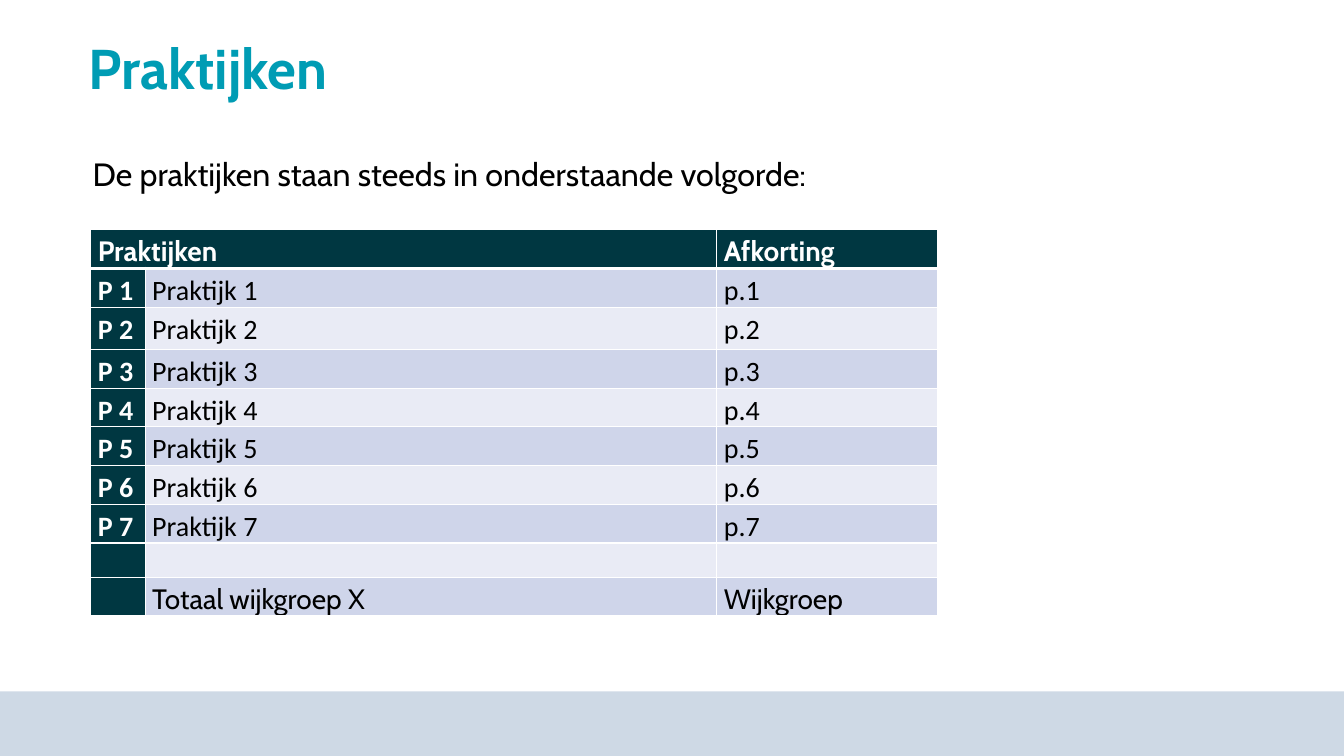
from lxml import etree
from pptx import Presentation
from pptx.dml.color import RGBColor
from pptx.enum import shapes, text
from pptx.oxml import ns
from pptx.util import Inches, Pt

COLORS = {
    "title": "009CB4",
    "dark": "003741",
    "band": "CFD5EA",
    "light": "E9EBF5",
    "footer": "CED9E5",
    "white": "FFFFFF",
    "black": "000000",
}
PRACTICES = [(f"P {n}", f"Praktijk {n}", f"p.{n}") for n in range(1, 8)]
ROWS = [
    ("Praktijken", "", "Afkorting"),
    *PRACTICES,
    ("", "", ""),
    ("", "Totaal wijkgroep X", "Wijkgroep"),
]
COLUMN_WIDTHS = [0.54, 5.67, 2.19]
ROW_HEIGHTS = [0.34, 0.37, 0.42] + [0.34] * 7


def rgb(name):
    """Return the named colour."""
    return RGBColor.from_string(COLORS[name])


def add_words(paragraph, words, size, color, bold=False, face="Cabin"):
    """Add one formatted run to a paragraph."""
    run = paragraph.add_run()
    run.text = words
    run.font.name = face
    run.font.size = Pt(size)
    run.font.bold = bold
    run.font.color.rgb = rgb(color)


def fit_frame(frame, anchor):
    """Let a text frame wrap and its box grow with the text."""
    frame.word_wrap = True
    frame.auto_size = text.MSO_AUTO_SIZE.SHAPE_TO_FIT_TEXT
    frame.vertical_anchor = anchor


def add_footer(slide, left, top, width, height):
    """Draw the band along the bottom edge."""
    band = slide.shapes.add_shape(
        shapes.MSO_SHAPE.RECTANGLE, Inches(left), Inches(top), Inches(width), Inches(height))
    band.shadow.inherit = False
    band.fill.solid()
    band.fill.fore_color.rgb = rgb("footer")
    band.line.fill.background()


def place_title(slide, left, top, width, height):
    """Move and format the title placeholder."""
    title = slide.shapes.title
    title.left, title.top = Inches(left), Inches(top)
    title.width, title.height = Inches(width), Inches(height)
    fit_frame(title.text_frame, text.MSO_ANCHOR.TOP)
    heading = title.text_frame.paragraphs[0]
    heading.alignment = text.PP_ALIGN.LEFT
    heading.line_spacing = 0.9
    add_words(heading, "Praktijken", 40, "title", bold=True)


def add_intro(slide, left, top, width, height):
    """Add the sentence above the table."""
    intro = slide.shapes.add_textbox(Inches(left), Inches(top), Inches(width), Inches(height))
    fit_frame(intro.text_frame, text.MSO_ANCHOR.MIDDLE)
    add_words(intro.text_frame.paragraphs[0],
              "De praktijken staan steeds in onderstaande volgorde:", 23, "black")


def set_borders(cell, top=1, bottom=1):
    """Give a cell white borders, with widths in points."""
    properties = cell._tc.get_or_add_tcPr()
    for side, width in (("L", 1), ("R", 1), ("T", top), ("B", bottom)):
        line = etree.SubElement(properties, ns.qn(f"a:ln{side}"), w=str(Pt(width)))
        fill = etree.SubElement(line, ns.qn("a:solidFill"))
        etree.SubElement(fill, ns.qn("a:srgbClr"), val=COLORS["white"])


def fill_cell(cell, words, row, column):
    """Format one cell by its place in the table."""
    header = row == 0
    dark = header or column == 0
    set_borders(cell, top=3 if row == 1 else 1, bottom=3 if header else 1)
    cell.fill.solid()
    cell.fill.fore_color.rgb = rgb("dark" if dark else "band" if row % 2 else "light")
    cell.margin_left = cell.margin_right = Inches(0.07)
    cell.margin_top = cell.margin_bottom = 0
    if words:
        paragraph = cell.text_frame.paragraphs[0]
        paragraph.line_spacing = 1.15
        paragraph.space_after = Pt(10)
        face = "Cabin" if row in (0, len(ROWS) - 1) else "Calibri"
        add_words(paragraph, words, 20, "white" if dark else "black", dark, face)


def add_practices(slide, left, top):
    """Build the table of practices and abbreviations."""
    table = slide.shapes.add_table(
        len(ROWS), len(COLUMN_WIDTHS), Inches(left), Inches(top),
        Inches(sum(COLUMN_WIDTHS)), Inches(sum(ROW_HEIGHTS))).table
    for column, width in zip(table.columns, COLUMN_WIDTHS):
        column.width = Inches(width)
    for row, height in zip(table.rows, ROW_HEIGHTS):
        row.height = Inches(height)
    for r, entries in enumerate(ROWS):
        for c, words in enumerate(entries):
            fill_cell(table.cell(r, c), words, r, c)
    table.cell(0, 0).merge(table.cell(0, 1))


def main():
    """Build and save the slide."""
    deck = Presentation()
    deck.slide_width, deck.slide_height = Inches(13.33), Inches(7.5)
    slide = deck.slides.add_slide(deck.slide_layouts[5])
    add_footer(slide, 0, 6.86, 13.33, 0.64)
    add_practices(slide, 0.9, 2.28)
    add_intro(slide, 0.82, 1.48, 11.42, 0.49)
    place_title(slide, 0.78, 0.36, 10.68, 0.71)
    deck.save("out.pptx")


if __name__ == "__main__":
    main()
